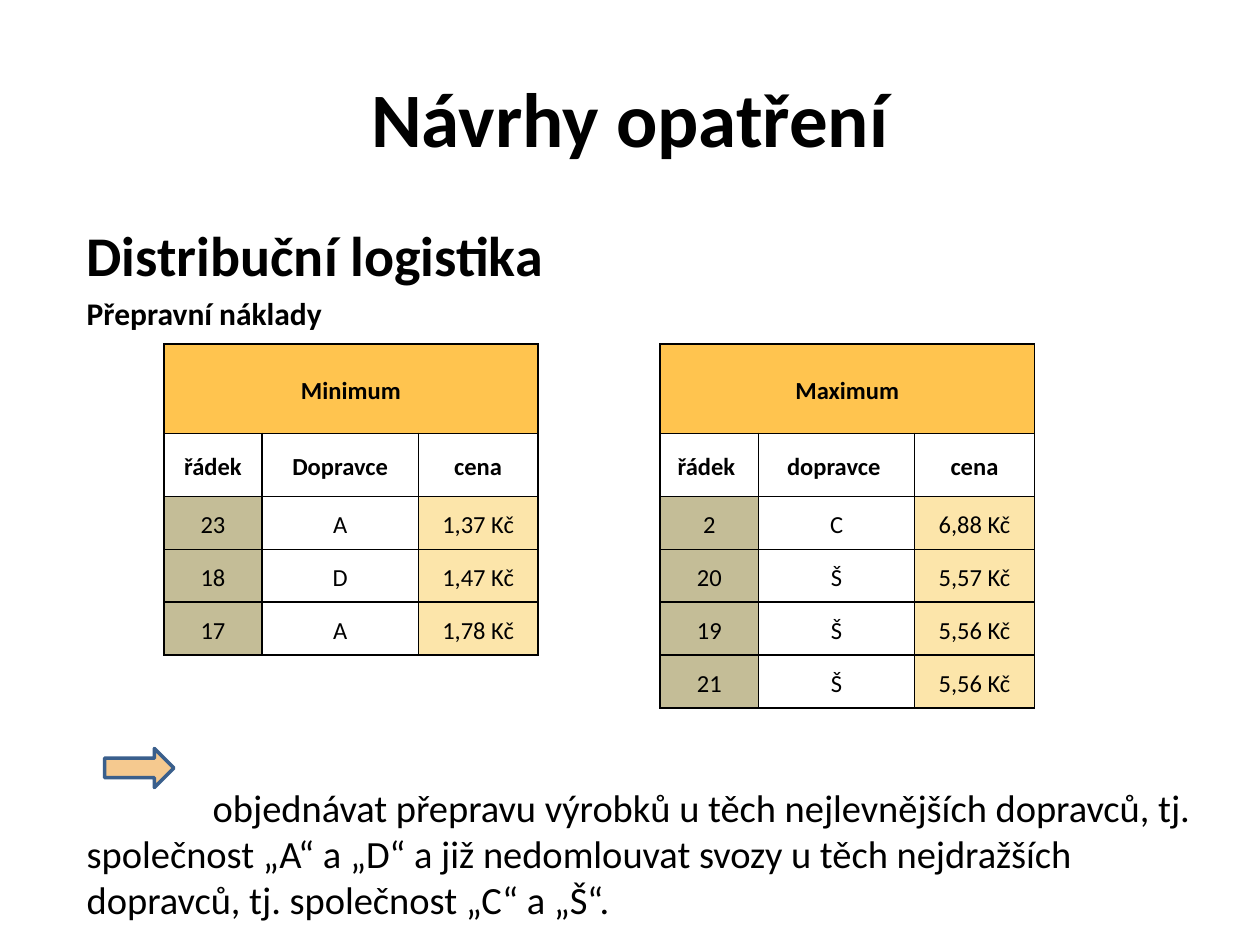
from lxml import etree
from pptx import Presentation
from pptx.dml.color import RGBColor
from pptx.enum.shapes import MSO_SHAPE
from pptx.enum.text import MSO_ANCHOR, PP_ALIGN
from pptx.oxml.ns import qn
from pptx.util import Inches, Pt

CENTER = PP_ALIGN.CENTER
MIDDLE = MSO_ANCHOR.MIDDLE
ARROW = MSO_SHAPE.RIGHT_ARROW

FONT = "Calibri"
BLACK = RGBColor(0x00, 0x00, 0x00)
WHITE = RGBColor(0xFF, 0xFF, 0xFF)
GOLD = RGBColor(0xFF, 0xC4, 0x4F)
KHAKI = RGBColor(0xC4, 0xBD, 0x97)
CREAM = RGBColor(0xFC, 0xE5, 0xAA)
PEACH = RGBColor(0xF5, 0xC9, 0x8F)
BLUE = RGBColor(0x3A, 0x5F, 0x8C)

GAP = 3
WIDTHS = [0.78, 1.24, 0.95, 0.97, 0.78, 1.24, 0.95]
HEIGHTS = [0.71, 0.5, 0.42, 0.42, 0.42, 0.42]
FILLS = [KHAKI, WHITE, CREAM]
ROWS = [
    ["Minimum", "", "", "", "Maximum", "", ""],
    ["řádek", "Dopravce", "cena", "", "řádek ", "dopravce ", "cena"],
    ["23", "A", "1,37 Kč", "", "2", "C", "6,88 Kč"],
    ["18", "D", "1,47 Kč", "", "20", "Š", "5,57 Kč"],
    ["17", "A", "1,78 Kč", "", "19", "Š", "5,56 Kč"],
    ["", "", "", "", "21", "Š", "5,56 Kč"],
]
SIDES = {"a:lnL": (0, -1), "a:lnR": (0, 1), "a:lnT": (-1, 0), "a:lnB": (1, 0)}
ADVICE = ("objednávat přepravu výrobků u těch nejlevnějších dopravců, tj. "
          "společnost „A“ a „D“ a již nedomlouvat svozy u těch nejdražších "
          "dopravců, tj. společnost „C“ a „Š“.")


def style(para, size, bold):
    for run in para.runs:
        font = run.font
        font.name, font.size, font.bold = FONT, Pt(size), bold
        font.color.rgb = BLACK


def add_text(slide, box, lines):
    """Add a wrapped text box; lines holds (text, size, bold)."""
    frame = slide.shapes.add_textbox(*map(Inches, box)).text_frame
    frame.word_wrap = True
    frame.text = "\n".join(text for text, _, _ in lines)
    for i, (para, (_, size, bold)) in enumerate(zip(frame.paragraphs, lines)):
        style(para, size, bold)
        if i:
            para.space_before = Pt(0.2 * size)
    return frame


def is_boxed(row, col):
    """Tell whether a grid place belongs to one of the two price lists."""
    inside = 0 <= row < len(HEIGHTS) and 0 <= col < len(WIDTHS)
    return inside and col != GAP and not (row == 5 and col < GAP)


def add_border(cell, row, col):
    props = cell._tc.get_or_add_tcPr()
    for tag, (down, right) in SIDES.items():
        line = etree.SubElement(props, qn(tag), w=str(Pt(1)))
        if is_boxed(row, col) or is_boxed(row + down, col + right):
            fill = etree.SubElement(line, qn("a:solidFill"))
            etree.SubElement(fill, qn("a:srgbClr"), val=str(BLACK))
        else:
            etree.SubElement(line, qn("a:noFill"))


def fill_cell(cell, row, col):
    add_border(cell, row, col)
    if not is_boxed(row, col):
        cell.fill.background()
        return
    cell.fill.solid()
    shade = GOLD if row == 0 else WHITE if row == 1 else FILLS[col % 4]
    cell.fill.fore_color.rgb = shade
    cell.margin_left = cell.margin_right = Inches(0.05)
    cell.margin_top = cell.margin_bottom = 0
    cell.vertical_anchor = MIDDLE
    cell.text_frame.text = ROWS[row][col]
    para = cell.text_frame.paragraphs[0]
    para.alignment, para.line_spacing = CENTER, 1.15
    style(para, 14, row < 2)


def add_prices(slide):
    table = slide.shapes.add_table(
        len(HEIGHTS), len(WIDTHS), Inches(1.3), Inches(2.73),
        Inches(sum(WIDTHS)), Inches(sum(HEIGHTS))).table
    table.first_row = table.horz_banding = False
    for col, width in enumerate(WIDTHS):
        table.columns[col].width = Inches(width)
    for row, height in enumerate(HEIGHTS):
        table.rows[row].height = Inches(height)
        for col in range(len(WIDTHS)):
            fill_cell(table.cell(row, col), row, col)
    for col in (0, GAP + 1):
        table.cell(0, col).merge(table.cell(0, col + 2))


def add_arrow(slide):
    arrow = slide.shapes.add_shape(
        ARROW, Inches(0.83), Inches(5.94), Inches(0.55), Inches(0.31))
    arrow.shadow.inherit = False
    arrow.fill.solid()
    arrow.fill.fore_color.rgb = PEACH
    arrow.line.color.rgb = BLUE
    arrow.line.width = Pt(2)


def main():
    deck = Presentation()
    deck.slide_width, deck.slide_height = Inches(10), Inches(7.5)
    slide = deck.slides.add_slide(deck.slide_layouts[6])

    title = add_text(slide, (0.5, 0.3, 9, 1.25),
                     [("Návrhy opatření", 44, True)])
    title.vertical_anchor = MIDDLE
    title.paragraphs[0].alignment = CENTER

    add_text(slide, (0.59, 1.7, 9, 1), [("Distribuční logistika", 32, True),
                                        ("Přepravní náklady", 18, True)])
    add_prices(slide)
    advice = add_text(slide, (0.59, 6.17, 9, 1.22), [(ADVICE, 22, False)])
    advice.paragraphs[0]._p.get_or_add_pPr().set("indent", str(Inches(1)))
    add_arrow(slide)
    deck.save("out.pptx")


if __name__ == "__main__":
    main()
